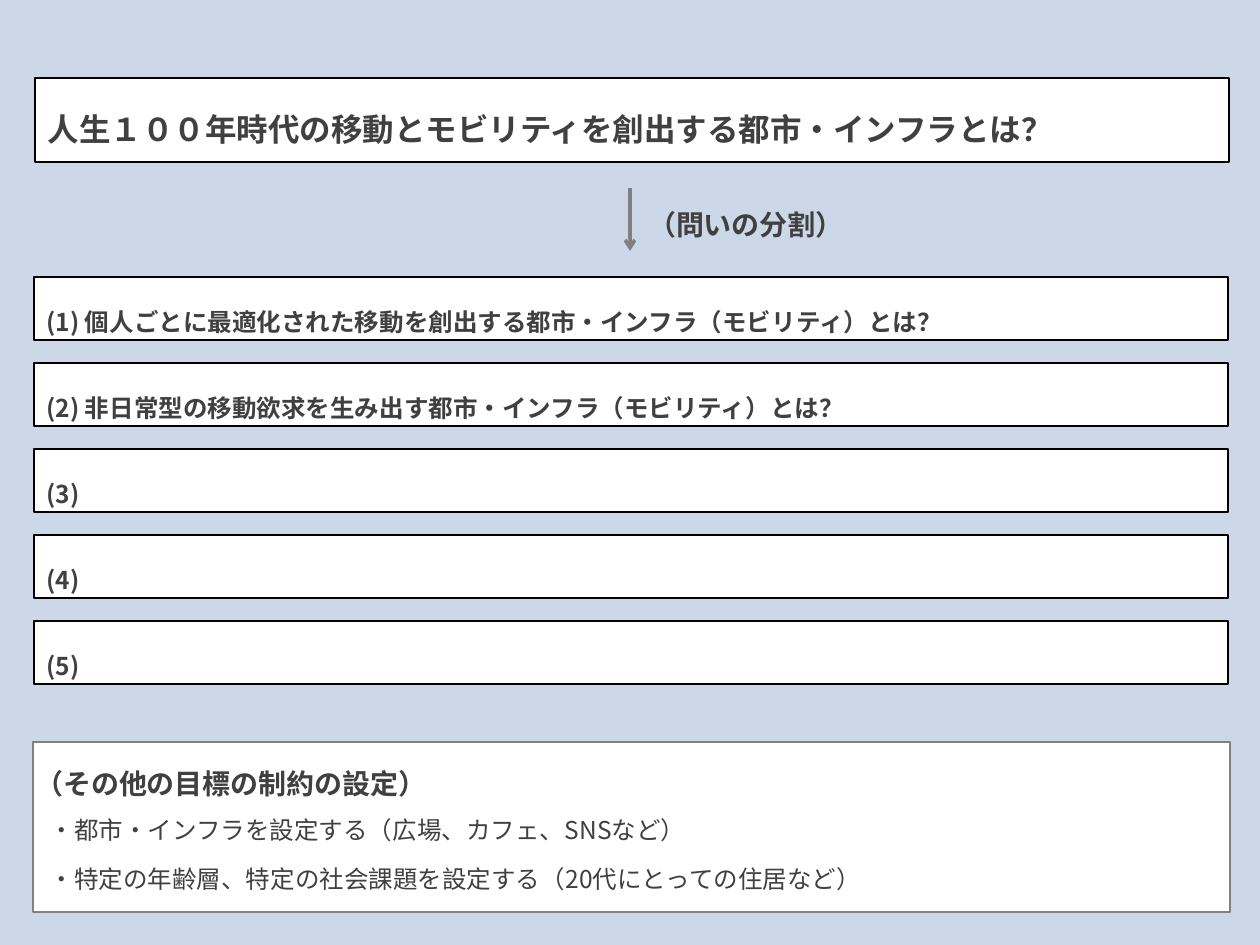
"""Build a slide that splits one question about mobility into five smaller ones."""
from lxml import etree
from pptx import Presentation
from pptx import util as u
from pptx.dml.color import RGBColor
from pptx.enum import shapes, text
from pptx.oxml.ns import qn

EMU_PER_PX = 914400 / 126
FONT = "Noto Sans CJK JP"
COLORS = {"back": "CCD8E7", "box": "FFFFFF", "edge": "000000",
          "gray": "808080", "text": "404040"}
QUESTIONS = [
    "(1) 個人ごとに最適化された移動を創出する都市・インフラ（モビリティ）とは？",
    "(2) 非日常型の移動欲求を生み出す都市・インフラ（モビリティ）とは？",
    "(3)",
    "(4)",
    "(5)",
]
CONSTRAINTS = [
    "・都市・インフラを設定する（広場、カフェ、SNSなど）",
    "・特定の年齢層、特定の社会課題を設定する（20代にとっての住居など）",
]


def px(n):
    """Turn pixels into EMU."""
    return u.Emu(round(n * EMU_PER_PX))


def color(name):
    """Return a named colour of the slide."""
    return RGBColor.from_string(COLORS[name])


def place(sp, x, y, w, h):
    """Move and size a shape."""
    sp.left, sp.top, sp.width, sp.height = px(x), px(y), px(w), px(h)


def outline(sp, edge, width):
    """Give a shape a white fill and a coloured edge."""
    sp.fill.solid()
    sp.fill.fore_color.rgb = color("box")
    sp.line.color.rgb = color(edge)
    sp.line.width = u.Pt(width)


def write(sp, lines, size, bold=True, spacing=32, align=text.PP_ALIGN.LEFT):
    """Fill a shape with formatted paragraphs."""
    tf = sp.text_frame
    tf.text = "\n".join(lines)
    tf.word_wrap = True
    tf.auto_size = text.MSO_AUTO_SIZE.NONE
    tf.vertical_anchor = text.MSO_ANCHOR.MIDDLE
    for p in tf.paragraphs:
        p.alignment = align
        p.line_spacing = u.Pt(spacing)
        p.space_before = p.space_after = u.Pt(0)
        for r in p.runs:
            r.font.name = FONT
            r.font.size = u.Pt(size)
            r.font.bold = bold
            r.font.color.rgb = color("text")
            etree.SubElement(r.font._element, qn("a:ea"), typeface=FONT)


def add_box(s, x, y, w, h, edge="edge", width=1):
    """Add a white rectangle."""
    sp = s.shapes.add_shape(shapes.MSO_SHAPE.RECTANGLE, px(x), px(y), px(w), px(h))
    sp.shadow.inherit = False
    outline(sp, edge, width)
    return sp


def add_label(s, x, y, w, h, label, align=text.PP_ALIGN.LEFT):
    """Add a bold caption."""
    sp = s.shapes.add_textbox(px(x), px(y), px(w), px(h))
    write(sp, [label], 16, align=align)


def add_arrow(s, x, top, bottom):
    """Add a gray arrow that points down."""
    sp = s.shapes.add_connector(shapes.MSO_CONNECTOR.STRAIGHT,
                                px(x), px(top), px(x), px(bottom))
    sp.line.color.rgb = color("gray")
    sp.line.width = u.Pt(2)
    etree.SubElement(sp.line._get_or_add_ln(), qn("a:tailEnd"), type="arrow")
    etree.SubElement(sp._element.spPr, qn("a:effectLst"))


def set_title(s, title):
    """Frame the main question in the title placeholder."""
    sp = s.shapes.title
    place(sp, 35, 78, 1194, 84)
    outline(sp, "edge", 1)
    write(sp, [title], 18)


def set_list(s, lines):
    """Set the body placeholder in front of its panel, without bullets."""
    sp = s.placeholders[1]
    s.shapes._spTree.append(sp._element)
    place(sp, 37, 776, 1179, 136)
    write(sp, lines, 14, bold=False, spacing=28)
    for p in sp.text_frame.paragraphs:
        pr = p._p.get_or_add_pPr()
        pr.set("marL", "0")
        pr.set("indent", "0")
        etree.SubElement(pr, qn("a:buNone"))


def main():
    """Build and save the slide."""
    prs = Presentation()
    prs.slide_width, prs.slide_height = px(1260), px(945)
    s = prs.slides.add_slide(prs.slide_layouts[1])
    s.background.fill.solid()
    s.background.fill.fore_color.rgb = color("back")
    set_title(s, "人生１００年時代の移動とモビリティを創出する都市・インフラとは？")
    add_arrow(s, 630, 188, 251)
    add_label(s, 620, 183, 252, 60, "（問いの分割）", text.PP_ALIGN.CENTER)
    for i, question in enumerate(QUESTIONS):
        write(add_box(s, 34, 277 + 86 * i, 1194, 63), [question], 14)
    add_box(s, 33, 742, 1197, 170, "gray", 1.5)
    set_list(s, CONSTRAINTS)
    add_label(s, 23, 742, 936, 60, "（その他の目標の制約の設定）")
    prs.save("out.pptx")


if __name__ == "__main__":
    main()
